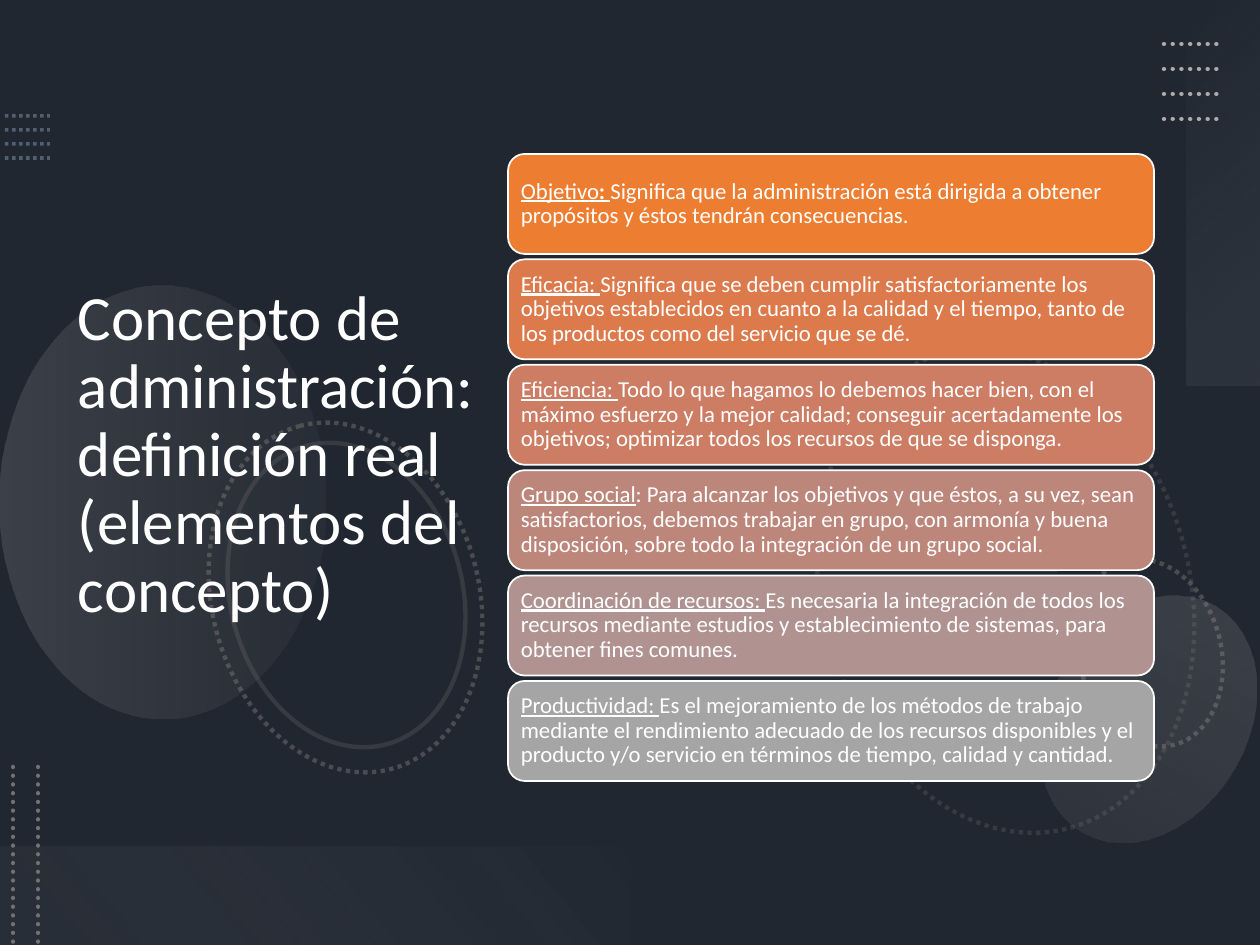
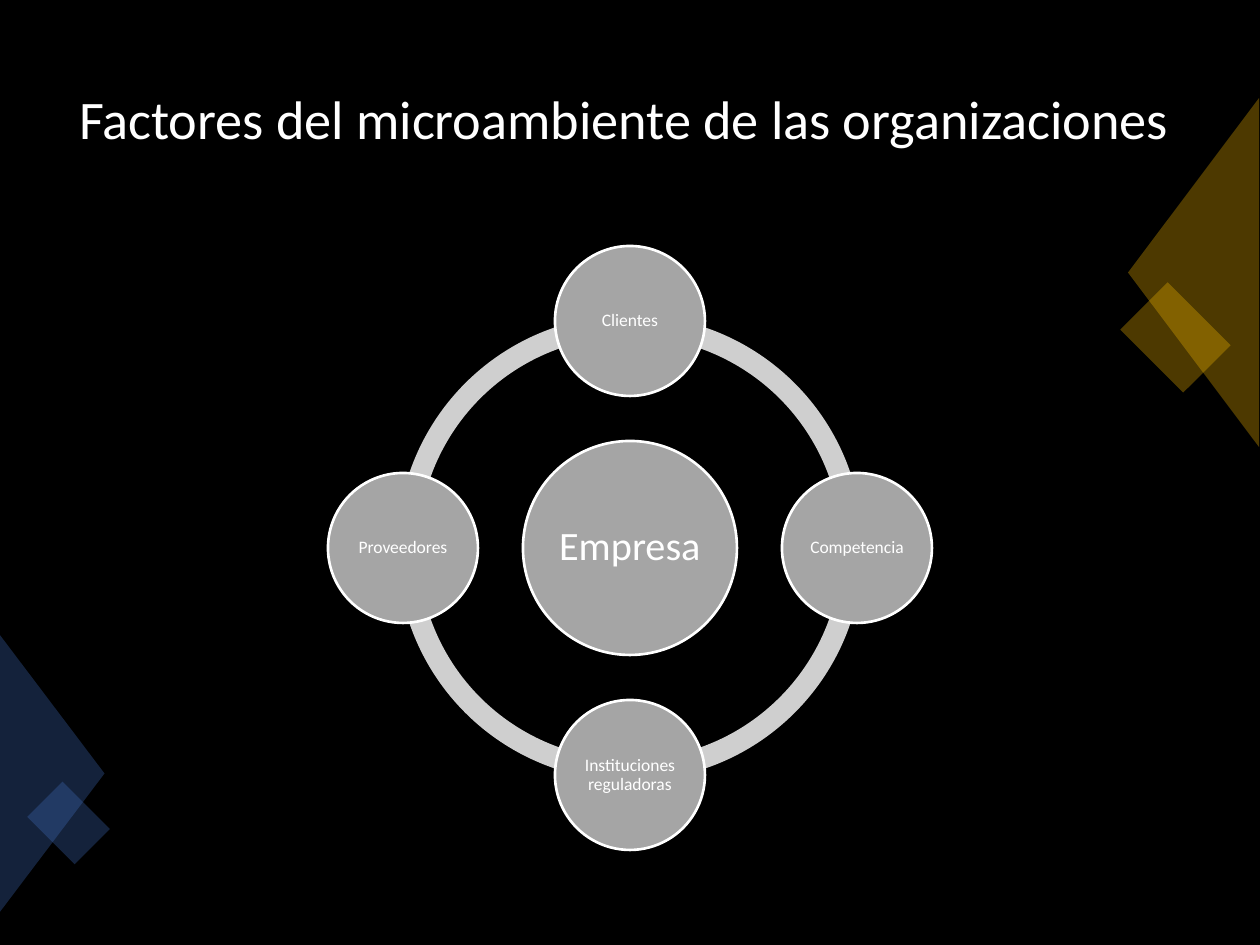
from math import cos, sin, radians
from lxml import etree
from pptx import Presentation
from pptx import util as u
from pptx.dml.color import RGBColor
from pptx.enum import dml, shapes, text
from pptx.oxml.ns import qn

PX = 914400 / 126
FONT = "Calibri"
WHITE, GREY, ASH, STONE = "FFFFFF", "A5A5A5", "AFABAB", "767171"
GOLD, BLUE = "FFC000", "4472C4"
KIND = shapes.MSO_SHAPE

HEAD1 = "Concepto de administración: definición real (elementos del concepto)"
CARDS = [
    ("ED7D31", [("Objetivo", "u"), (":", "ub"), (" ", "u"),
                ("Significa que la administración está dirigida a obtener propósitos y éstos tendrán consecuencias.", "")]),
    ("DC7A4B", [("Eficacia: ", "u"),
                ("Significa que se deben cumplir satisfactoriamente los objetivos establecidos en cuanto a la calidad y el tiempo, tanto de los productos como del servicio que se dé.", "")]),
    ("CC7D64", [("Eficiencia: ", "u"),
                ("Todo lo que hagamos lo debemos hacer bien, con el máximo esfuerzo y la mejor calidad; conseguir acertadamente los objetivos; optimizar todos los recursos de que se disponga.", "")]),
    ("BD867B", [("Grupo social", "u"),
                (": Para alcanzar los objetivos y que éstos, a su vez, sean satisfactorios, debemos trabajar en grupo, con armonía y buena disposición, sobre todo la integración de un grupo social.", "")]),
    ("B09391", [("Coordinación de recursos: ", "u"),
                ("Es necesaria la integración de todos los recursos mediante estudios y establecimiento de sistemas, para obtener fines comunes.", "")]),
    (GREY, [("Productividad: ", "u"),
            ("Es el mejoramiento de los métodos de trabajo mediante el rendimiento adecuado de los recursos disponibles y el producto y/o servicio en términos de tiempo, calidad y cantidad.", "")]),
]
HEAD2 = "Factores del microambiente de las organizaciones"
HUB = "Empresa"
NODES = ["Clientes", "Competencia", "Instituciones reguladoras", "Proveedores"]

RINGS = [
    ((760, 407, 491, 368), True, 25),
    ((1055, 582, 190, 142), True, 50),
    ((168, 464, 355, 267), True, 50),
    ((192, 479, 309, 232), False, 25),
]
GLOWS = [
    (KIND.OVAL, (-54, 340, 433, 325), 270, 90, [(0, ASH, 20), (1, STONE, 10)]),
    (KIND.OVAL, (1050, 588, 197, 262), 210, 90, [(0, ASH, 10), (1, ASH, 20)]),
    (KIND.RECTANGLE, (1031, 156, 386, 74), 270, 140, [(0, "F5F5F5", 0), (1, ASH, 10)]),
    (KIND.RECTANGLE, (0, 847, 630, 98), 180, 140, [(0.1, STONE, 10), (1, "F1F0F0", 0)]),
]
GEMS = [
    (KIND.RECTANGLE, (1131, 304, 89, 67), 45, GOLD),
    (KIND.ISOSCELES_TRIANGLE, (1019, 207, 349, 131), 270, GOLD),
    (KIND.ISOSCELES_TRIANGLE, (-87, 721, 278, 105), 90, BLUE),
    (KIND.RECTANGLE, (35, 798, 67, 50), 45, BLUE),
]
DOTS = [
    [(5, 116 + 14 * i, 50, 116 + 14 * i) for i in range(4)],
    [(1164, 44 + 25 * i, 1221, 44 + 25 * i) for i in range(4)],
    [(x, 767, x, 945) for x in (13, 38)],
]
DOT_LOOK = [("8497B0", 2, 50, "flat"), (ASH, 2.5, 100, "rnd"), (STONE, 2.5, 100, "rnd")]


def emu(*vals):
    return [u.Emu(round(v * PX)) for v in vals]


def rgb(code):
    return RGBColor.from_string(code)


def fade(part, *alphas):
    for clr, alpha in zip(part._element.spPr.iter(qn("a:srgbClr")), alphas):
        etree.SubElement(clr, qn("a:alpha")).set("val", str(alpha * 1000))


def add(slide, kind, box, fill=None, line=None, wide=1, turn=0):
    part = slide.shapes.add_shape(kind, *emu(*box))
    part.shadow.inherit = False
    part.rotation = turn
    if fill:
        part.fill.solid()
        part.fill.fore_color.rgb = rgb(fill)
    else:
        part.fill.background()
    if line:
        part.line.color.rgb = rgb(line)
        part.line.width = u.Pt(wide)
    else:
        part.line.fill.background()
    return part


def glow(slide, kind, box, turn, angle, stops):
    part = add(slide, kind, box, turn=turn)
    part.fill.gradient()
    part.fill.gradient_angle = 360 - angle
    for stop, (pos, code, _) in zip(part.fill.gradient_stops, stops):
        stop.position = pos
        stop.color.rgb = rgb(code)
    fade(part, *[alpha for *_, alpha in stops])


def dot(slide, ends, code, wide, alpha, cap):
    link = slide.shapes.add_connector(shapes.MSO_CONNECTOR.STRAIGHT, *emu(*ends))
    link.line.color.rgb = rgb(code)
    link.line.width = u.Pt(wide)
    link.line.dash_style = dml.MSO_LINE.ROUND_DOT
    props = link._element.spPr
    props.find(qn("a:ln")).set("cap", cap)
    etree.SubElement(props, qn("a:effectLst"))
    if alpha < 100:
        fade(link, alpha)


def write(part, runs, size, align, inset):
    frame = part.text_frame
    frame.word_wrap = True
    frame.auto_size = text.MSO_AUTO_SIZE.NONE
    frame.vertical_anchor = text.MSO_ANCHOR.MIDDLE
    pad, = emu(inset)
    frame.margin_left = frame.margin_right = pad
    frame.margin_top = frame.margin_bottom = pad
    para = frame.paragraphs[0]
    para.alignment = align
    para.line_spacing = 0.9
    para.font.name = FONT
    para.font.size = u.Pt(size)
    para.font.color.rgb = rgb(WHITE)
    for words, style in runs:
        run = para.add_run()
        run.text = words
        if "u" in style:
            run.font.underline = True
        if "b" in style:
            run.font.bold = True


def start(deck, back, words, box, size):
    slide = deck.slides.add_slide(deck.slide_layouts[5])
    slide.background.fill.solid()
    slide.background.fill.fore_color.rgb = rgb(back)
    head = slide.shapes.title
    head.left, head.top, head.width, head.height = emu(*box)
    write(head, [(words, "")], size, text.PP_ALIGN.LEFT, 12)
    return slide


def concept(deck):
    slide = start(deck, "44546A", HEAD1, (66, 68, 433, 777), 36)
    fade(add(slide, KIND.RECTANGLE, (0, 0, 1260, 945), "000000"), 53)
    for box, dashed, alpha in RINGS:
        ring = add(slide, KIND.OVAL, box, line=STONE, wide=2.5, turn=75)
        if dashed:
            ring.line.dash_style = dml.MSO_LINE.ROUND_DOT
        fade(ring, alpha)
    for item in GLOWS:
        glow(slide, *item)
    for group, look in zip(DOTS, DOT_LOOK):
        for ends in group:
            dot(slide, ends, *look)
    head = slide.shapes.title._element
    head.getparent().append(head)
    top, tall, end = 154, 100, 781
    step = (end - top - tall) / (len(CARDS) - 1)
    for i, (code, runs) in enumerate(CARDS):
        card = add(slide, KIND.ROUNDED_RECTANGLE, (508, top + i * step, 646, tall), code, WHITE)
        write(card, runs, 13, text.PP_ALIGN.LEFT, 8)


def disc(slide, x, y, wide, words, size):
    part = add(slide, KIND.OVAL, (x - wide / 2, y - wide / 2, wide, wide), GREY, WHITE, 1.5)
    write(part, [(words, "")], size, text.PP_ALIGN.CENTER, 1)


def factors(deck):
    slide = start(deck, "000000", HEAD2, (67, 44, 1126, 156), 31)
    for kind, box, turn, code in GEMS:
        fade(add(slide, kind, box, code, turn=turn), 30)
    x, y, wide, reach = 630, 548, 466, 227
    for i in range(len(NODES)):
        arc = add(slide, KIND.BLOCK_ARC, (x - wide / 2, y - wide / 2, wide, wide), "CFCFCF")
        for k, val in enumerate((54 * i, 54 * (i + 1) % 216, 0.046)):
            arc.adjustments[k] = val
    disc(slide, x, y, 214, HUB, 23)
    for i, words in enumerate(NODES):
        turn = radians(360 / len(NODES) * i - 90)
        disc(slide, x + reach * cos(turn), y + reach * sin(turn), 150, words, 10)


def main():
    deck = Presentation()
    deck.slide_width, deck.slide_height = emu(1260, 945)
    concept(deck)
    factors(deck)
    deck.save("out.pptx")


if __name__ == "__main__":
    main()
